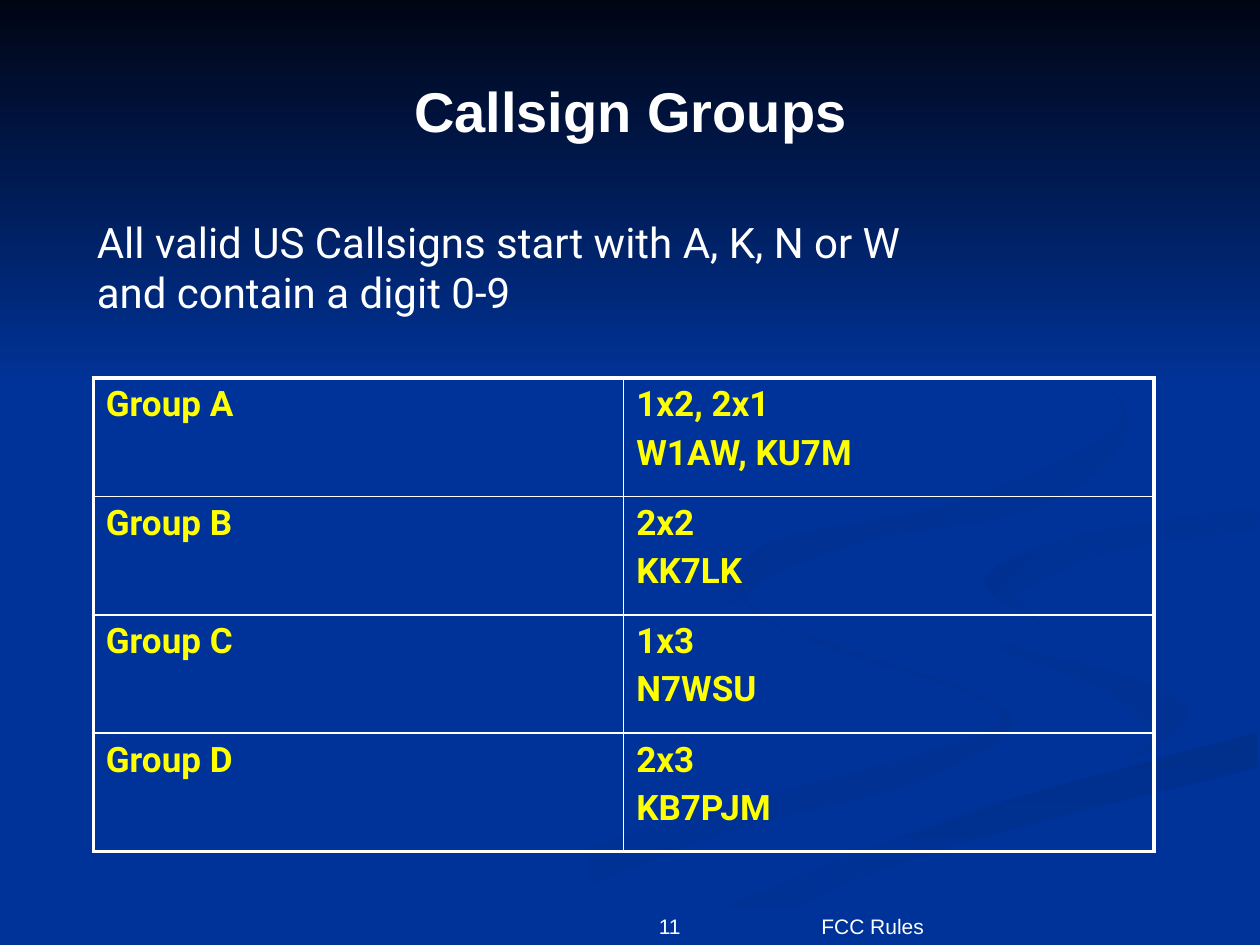
from dataclasses import dataclass

from lxml.etree import SubElement
from pptx import Presentation
from pptx.dml.color import RGBColor
from pptx.enum.text import MSO_ANCHOR, PP_ALIGN
from pptx.oxml.ns import qn
from pptx.slide import Slide
from pptx.table import _Cell
from pptx.util import Inches, Pt

# The slide is a grid of 1000 columns by 750 rows with square units
COLUMNS, ROWS = 1000, 750
UNIT = Inches(10) // COLUMNS
COLORS = {
    "background": "003399", "night": "000514", "white": "FFFFFF", "yellow": "FFFF00",
    "haze": "003193", "mist": "003091", "shade": "002F8C", "dusk": "002F8E",
}
Point = tuple[float, float]


@dataclass
class Ribbon:
    """A band between two smooth edges, drawn out along one and back along the other."""
    start: str
    end: str
    angle: int
    out: list[Point]
    back: list[Point]


@dataclass
class Label:
    text: str
    left: int
    top: int
    width: int
    height: int
    size: int
    font: str = "Arial"
    bold: bool = False
    align: PP_ALIGN = PP_ALIGN.LEFT
    anchor: MSO_ANCHOR = MSO_ANCHOR.BOTTOM


@dataclass
class Group:
    name: str
    formats: str
    examples: str


RIBBONS = [
    # Long S-curve, lower part
    Ribbon("background", "haze", 0,
           [(575, 459), (594, 485), (682, 519), (781, 553), (800, 581),
            (721, 623), (564, 665), (361, 749)],
           [(300, 749), (417, 690), (579, 639), (767, 587), (781, 556),
            (654, 513), (572, 476)]),
    # Right-hand curl, lower part
    Ribbon("background", "haze", 45,
           [(724, 464), (774, 503), (905, 540), (943, 570), (894, 605)],
           [(918, 581), (868, 544), (746, 500)]),
    # Sweep to the lower right edge
    Ribbon("shade", "background", 90,
           [(571, 749), (722, 682), (998, 609)],
           [(998, 581), (764, 647), (503, 749)]),
    # Right-hand curl, upper part
    Ribbon("mist", "background", 45,
           [(998, 402), (849, 427), (781, 460), (826, 496)],
           [(805, 472), (878, 439), (998, 420)]),
    # Long S-curve, upper part
    Ribbon("dusk", "background", 45,
           [(762, 233), (864, 291), (894, 344), (825, 402), (683, 430),
            (593, 470), (622, 500)],
           [(578, 468), (615, 429), (763, 398), (889, 335), (846, 279)]),
    # Night sky along the top
    Ribbon("night", "background", 90,
           [(0, 0), (COLUMNS, 0)], [(COLUMNS, 308), (0, 308)]),
]

LABELS = [
    Label("FCC Rules", 642, 708, 358, 42, 12),
    Label("11", 450, 717, 100, 33, 12, align=PP_ALIGN.RIGHT),
    Label("Callsign Groups", 17, 0, 967, 175, 32, bold=True,
          align=PP_ALIGN.CENTER, anchor=MSO_ANCHOR.MIDDLE),
    Label("All valid US Callsigns start with A, K, N or W\vand contain a digit 0-9",
          67, 167, 833, 90, 24, "Roboto", anchor=MSO_ANCHOR.TOP),
]

GROUPS = [
    Group("Group A", "1x2, 2x1", "W1AW, KU7M"),
    Group("Group B", "2x2", "KK7LK"),
    Group("Group C", "1x3", "N7WSU"),
    Group("Group D", "2x3", "KB7PJM"),
]


def color(name: str) -> RGBColor:
    return RGBColor.from_string(COLORS[name])


def smooth(knots: list[Point], steps: int = 6) -> list[Point]:
    """Return points of a Catmull-Rom curve through the knots."""
    padded = [knots[0], *knots, knots[-1]]
    curve = [knots[0]]
    for before, start, end, after in zip(padded, padded[1:], padded[2:], padded[3:]):
        for step in range(1, steps + 1):
            t = step / steps
            curve.append(tuple(
                b + ((c - a) * t + (2 * a - 5 * b + 4 * c - d) * t**2
                     + (3 * b - a - 3 * c + d) * t**3) / 2
                for a, b, c, d in zip(before, start, end, after)))
    return curve


def draw_ribbon(slide: Slide, ribbon: Ribbon) -> None:
    outline = smooth(ribbon.out) + smooth(ribbon.back)
    builder = slide.shapes.build_freeform(*outline[0], scale=UNIT)
    builder.add_line_segments(outline[1:], close=True)
    shape = builder.convert_to_shape()
    shape.shadow.inherit = False
    shape.line.fill.background()
    shape.fill.gradient()
    shape.fill.gradient_angle = -ribbon.angle % 360
    for stop, name in zip(shape.fill.gradient_stops, (ribbon.start, ribbon.end)):
        stop.color.rgb = color(name)


def draw_label(slide: Slide, label: Label) -> None:
    box = (label.left, label.top, label.width, label.height)
    frame = slide.shapes.add_textbox(*(length * UNIT for length in box)).text_frame
    frame.word_wrap = True
    frame.vertical_anchor = label.anchor
    frame.text = label.text
    paragraph = frame.paragraphs[0]
    paragraph.alignment = label.align
    font = paragraph.font
    font.name, font.size, font.bold = label.font, Pt(label.size), label.bold
    font.color.rgb = color("white")


def set_borders(cell: _Cell, widths: dict[str, float]) -> None:
    properties = cell._tc.get_or_add_tcPr()
    for index, (side, width) in enumerate(widths.items()):
        line = properties.makeelement(qn(f"a:{side}"), {"w": str(Pt(width))})
        fill = SubElement(line, qn("a:solidFill"))
        SubElement(fill, qn("a:srgbClr"), val=COLORS["white"])
        properties.insert(index, line)


def draw_groups(slide: Slide, groups: list[Group]) -> None:
    box = (74, 300, 842, 376)
    table = slide.shapes.add_table(
        len(groups), 2, *(length * UNIT for length in box)).table
    table.first_row = table.horz_banding = False
    thin, thick = 1, 2.25
    for row, group in enumerate(groups):
        for column, lines in enumerate(([group.name], [group.formats, group.examples])):
            cell = table.cell(row, column)
            cell.fill.background()
            set_borders(cell, {
                "lnL": thick if column == 0 else thin,
                "lnR": thick if column == 1 else thin,
                "lnT": thick if row == 0 else thin,
                "lnB": thick if row == len(groups) - 1 else thin,
            })
            cell.text = "\n".join(lines)
            for paragraph in cell.text_frame.paragraphs:
                paragraph.space_before = Pt(4)
                font = paragraph.font
                font.name, font.size, font.bold = "Roboto", Pt(20), True
                font.color.rgb = color("yellow")


def main() -> None:
    presentation = Presentation()
    presentation.slide_width, presentation.slide_height = COLUMNS * UNIT, ROWS * UNIT
    slide = presentation.slides.add_slide(presentation.slide_layouts[6])
    slide.background.fill.solid()
    slide.background.fill.fore_color.rgb = color("background")
    for ribbon in RIBBONS:
        draw_ribbon(slide, ribbon)
    draw_groups(slide, GROUPS)
    for label in LABELS:
        draw_label(slide, label)
    presentation.save("out.pptx")


if __name__ == "__main__":
    main()
